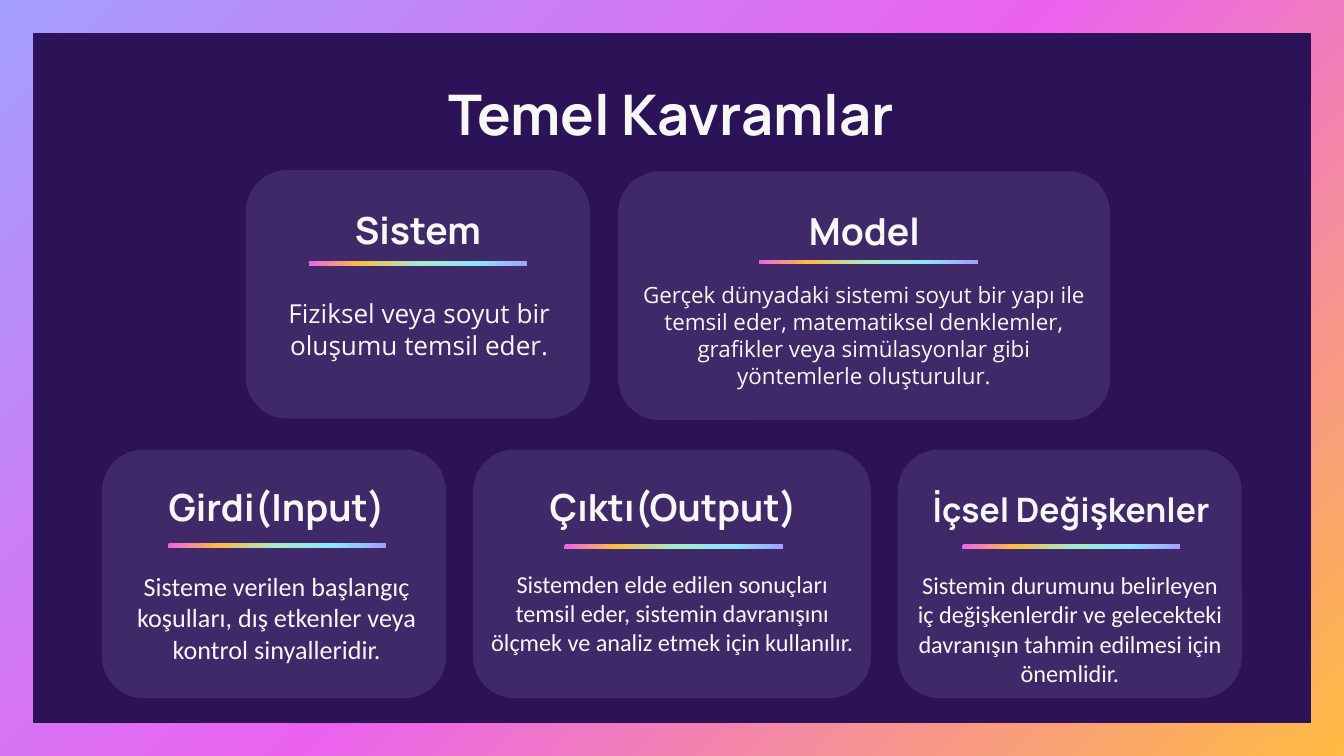
from dataclasses import dataclass

from lxml.etree import SubElement
from pptx import Presentation
from pptx.dml.color import RGBColor
from pptx.enum.shapes import MSO_SHAPE
from pptx.enum.text import MSO_ANCHOR, PP_ALIGN
from pptx.oxml.ns import qn
from pptx.util import Inches, Pt

COLUMNS, ROWS = 100, 56.25
CARD_HEIGHT = 18.5
HEADING_WIDTH, HEADING_HEIGHT = 25.6, 4
RULE_WIDTH, RULE_HEIGHT = 16.2, 0.3


@dataclass(frozen=True)
class Theme:
    panel: str = "2C1256"
    card: str = "402968"
    text: str = "F7F7F5"
    frame: tuple = ((0, "A49EFF"), (50, "EB62F0"), (100, "FFBB43"))
    rule: tuple = ((0, "EB62F0"), (23, "FFBB43"), (50, "A7ECC8"),
                   (76, "8EE6FF"), (100, "A49EFF"))
    heading_font: str = "Manrope"
    title_size: int = 30
    heading_size: int = 20
    small_heading_size: int = 18
    large_size: int = 14
    medium_size: int = 13
    small_size: int = 12


THEME = Theme()


@dataclass(frozen=True)
class Card:
    heading: str
    body: str
    width: float
    body_font: str
    body_size: int
    body_row: float
    body_height: float
    rule_row: float
    heading_size: int = THEME.heading_size
    heading_row: float = 2.9
    shift: float = 0
    body_shift: float = 0
    drop: float = 0
    body_inset: float = 0


TOP_CARDS = [
    Card("Sistem", "Fiziksel veya soyut bir oluşumu temsil eder.",
         25.6, "Open Sans", THEME.large_size, 8.5, 6.5, 6.8,
         heading_row=3.1, body_shift=0.1),
    Card("Model ", "Gerçek dünyadaki sistemi soyut bir yapı ile temsil eder, "
         "matematiksel denklemler, grafikler veya simülasyonlar gibi "
         "yöntemlerle oluşturulur.",
         36.6, "Open Sans", THEME.small_size, 7.2, 10.2, 6.6, heading_row=3.1,
         shift=0.3, drop=0.1, body_inset=0.5),
]
BOTTOM_CARDS = [
    Card("Girdi(Input)", "Sisteme verilen başlangıç koşulları, dış etkenler "
         "veya kontrol sinyalleridir.",
         25.6, "Calibri", THEME.large_size, 8, 8.7, 7,
         shift=0.2, body_shift=0.2),
    Card("Çıktı(Output)", "Sistemden elde edilen sonuçları temsil eder, "
         "sistemin davranışını ölçmek ve analiz etmek için kullanılır.",
         29.6, "Calibri", THEME.medium_size, 7.9, 8.7, 7.1, shift=0.1),
    Card("İçsel Değişkenler", "Sistemin durumunu belirleyen iç değişkenlerdir "
         "ve gelecekteki davranışın tahmin edilmesi için önemlidir.",
         25.6, "Calibri", THEME.medium_size, 8, 9.1, 7.1,
         heading_size=THEME.small_heading_size, shift=0.1, body_inset=0.2),
]


def grid(*cells):
    return [Inches(cell / 10) for cell in cells]


def set_gradient(fill, element, stops):
    fill.gradient()
    fill.gradient_angle = 315
    stop_list = next(element.iter(qn("a:gsLst")))
    for stop in list(stop_list):
        stop_list.remove(stop)
    for position, color in stops:
        stop = SubElement(stop_list, qn("a:gs"), pos=str(position * 1000))
        SubElement(stop, qn("a:srgbClr"), val=color)


def add_block(slide, kind, box, color=None):
    shape = slide.shapes.add_shape(kind, *grid(*box))
    shape.shadow.inherit = False
    shape.line.fill.background()
    if color:
        shape.fill.solid()
        shape.fill.fore_color.rgb = RGBColor.from_string(color)
    return shape


def add_text(slide, text, box, font, size, bold=False, anchor=MSO_ANCHOR.TOP):
    frame = slide.shapes.add_textbox(*grid(*box)).text_frame
    frame.word_wrap = True
    frame.vertical_anchor = anchor
    frame.margin_left = frame.margin_right = Inches(0.1)
    frame.margin_top = frame.margin_bottom = Inches(0.1)
    frame.text = text
    paragraph = frame.paragraphs[0]
    paragraph.alignment = PP_ALIGN.CENTER
    style = paragraph.runs[0].font
    style.name, style.size, style.bold = font, Pt(size), bold
    style.color.rgb = RGBColor.from_string(THEME.text)


def add_card(slide, card, left, top):
    top += card.drop
    center = left + card.width / 2 + card.shift
    add_block(slide, MSO_SHAPE.ROUNDED_RECTANGLE,
              (left, top, card.width, CARD_HEIGHT), THEME.card)
    add_text(slide, card.heading,
             (center - HEADING_WIDTH / 2, top + card.heading_row,
              HEADING_WIDTH, HEADING_HEIGHT),
             THEME.heading_font, card.heading_size, True, MSO_ANCHOR.BOTTOM)
    add_text(slide, card.body,
             (left + card.body_inset + card.body_shift, top + card.body_row,
              card.width - 2 * card.body_inset, card.body_height),
             card.body_font, card.body_size)
    rule = add_block(slide, MSO_SHAPE.RECTANGLE,
                     (center - RULE_WIDTH / 2, top + card.rule_row,
                      RULE_WIDTH, RULE_HEIGHT))
    set_gradient(rule.fill, rule.element, THEME.rule)


def add_card_row(slide, cards, left, top, gap):
    for card in cards:
        add_card(slide, card, left, top)
        left += card.width + gap


def add_panel(slide, margin):
    panel = add_block(slide, MSO_SHAPE.RECTANGLE,
                      (margin, margin, COLUMNS - 2 * margin, ROWS - 2 * margin),
                      THEME.panel)
    panel.line.color.rgb = RGBColor.from_string(THEME.panel)
    panel.line.width = Pt(0.75)


def main():
    presentation = Presentation()
    presentation.slide_width, presentation.slide_height = grid(COLUMNS, ROWS)
    slide = presentation.slides.add_slide(presentation.slide_layouts[6])
    set_gradient(slide.background.fill, slide.element, THEME.frame)
    add_panel(slide, 2.5)
    add_text(slide, "Temel Kavramlar", (7.8, 4.9, 84.3, 6.2),
             THEME.heading_font, THEME.title_size, True)
    add_card_row(slide, TOP_CARDS, 18.3, 12.65, 2.1)
    add_card_row(slide, BOTTOM_CARDS, 7.6, 33.45, 2)
    presentation.save("out.pptx")


if __name__ == "__main__":
    main()
